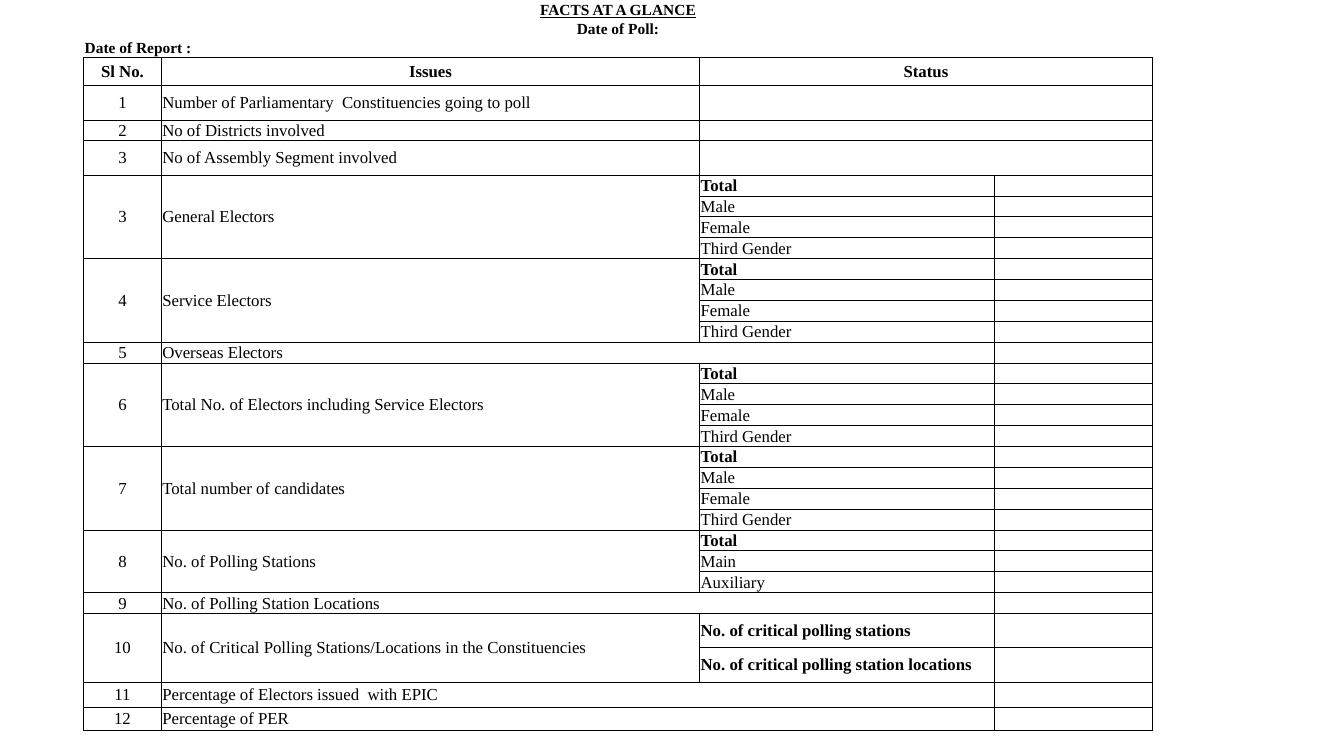
from pptx import Presentation
from pptx.dml.color import RGBColor
from pptx.enum.text import MSO_ANCHOR, PP_ALIGN
from pptx.util import Inches, Pt
from lxml.etree import SubElement
from pptx.oxml.ns import qn

# Content
TITLE, POLL_DATE, REPORT_DATE = "FACTS AT A GLANCE", "Date of Poll:", "Date of Report :"
HEADINGS = ("Sl No.", "Issues", "Status")
GENDERS = ("Total", "Male", "Female", "Third Gender")
STATIONS = ("Total", "Main", "Auxiliary")
CRITICAL = ("No. of critical polling stations", "No. of critical polling station locations")
BOLD_LABELS = ("Total", *CRITICAL)
WIDE_STATUS, WIDE_ISSUE = "wide status", "wide issue"

# Number, issue, status labels or the part that spans two columns, row height (None: regular)
ISSUES = [
    ("1", "Number of Parliamentary  Constituencies going to poll", WIDE_STATUS, 0.34),
    ("2", "No of Districts involved", WIDE_STATUS, None),
    ("3", "No of Assembly Segment involved", WIDE_STATUS, 0.34),
    ("3", "General Electors", GENDERS, None),
    ("4", "Service Electors", GENDERS, None),
    ("5", "Overseas Electors", WIDE_ISSUE, None),
    ("6", "Total No. of Electors including Service Electors", GENDERS, None),
    ("7", "Total number of candidates", GENDERS, None),
    ("8", "No. of Polling Stations", STATIONS, None),
    ("9", "No. of Polling Station Locations", WIDE_ISSUE, None),
    ("10", "No. of Critical Polling Stations/Locations in the Constituencies", CRITICAL, 0.34),
    ("11", "Percentage of Electors issued  with EPIC", WIDE_ISSUE, 0.25),
    ("12", "Percentage of PER", WIDE_ISSUE, 0.23),
]

THEME = {
    "font": "Times New Roman",
    "ink": "000000",
    "caption": Pt(11),
    "body": Pt(12),
    "rule": Pt(0.5),
    "plain_table": "{2D5ABB26-0587-4C30-8999-92F81FD0307C}",
}

# Layout
LEFT, TOP, HEIGHT = 0.83, 0, 7.25
COLUMN_WIDTHS = (0.77, 5.34, 2.92, 1.57)
CAPTION_ROWS, HEADING_ROW = 3, 3
row_heights = [0.19] * CAPTION_ROWS + [0.28]
for _, _, status, height in ISSUES:
    row_heights += [height] * (len(status) if isinstance(status, tuple) else 1)
fixed_height = sum(height for height in row_heights if height)
regular_height = (HEIGHT - fixed_height) / row_heights.count(None)


def draw_borders(cell, sides):
    properties = cell._tc.get_or_add_tcPr()
    for side in sides:
        line = SubElement(properties, qn(f"a:ln{side}"), w=str(THEME["rule"]))
        fill = SubElement(line, qn("a:solidFill"))
        SubElement(fill, qn("a:srgbClr"), val=THEME["ink"])


def write(cell, text, bold=False, centered=False, size=THEME["body"], underline=False):
    paragraph = cell.text_frame.paragraphs[0]
    paragraph.text = text
    paragraph.alignment = PP_ALIGN.CENTER if centered else PP_ALIGN.LEFT
    font = paragraph.font
    font.name, font.size, font.bold, font.underline = THEME["font"], size, bold, underline
    font.color.rgb = RGBColor.from_string(THEME["ink"])


presentation = Presentation()
presentation.slide_width, presentation.slide_height = Inches(13.33), Inches(7.5)
slide = presentation.slides.add_slide(presentation.slide_layouts[6])

# Table grid
facts = slide.shapes.add_table(
    len(row_heights), len(COLUMN_WIDTHS),
    Inches(LEFT), Inches(TOP), Inches(sum(COLUMN_WIDTHS)), Inches(HEIGHT),
).table
facts.first_row = facts.horz_banding = False
facts._tbl.tblPr.find(qn("a:tableStyleId")).text = THEME["plain_table"]
for column, width in zip(facts.columns, COLUMN_WIDTHS):
    column.width = Inches(width)
for row_index, (row, height) in enumerate(zip(facts.rows, row_heights)):
    row.height = Inches(height or regular_height)
    for cell in row.cells:
        if row_index >= CAPTION_ROWS:
            draw_borders(cell, "LRTB")
        elif row_index == CAPTION_ROWS - 1:
            draw_borders(cell, "B")
        cell.fill.background()
        cell.vertical_anchor = MSO_ANCHOR.MIDDLE
        cell.margin_left = cell.margin_right = cell.margin_top = Inches(0.01)
        cell.margin_bottom = 0
        write(cell, "", size=THEME["caption"])
        # An empty cell takes its line height from the paragraph end
        SubElement(cell.text_frame.paragraphs[0]._p, qn("a:endParaRPr"), sz="1100")

# Captions
captions = ((TITLE, 3, True, True), (POLL_DATE, 3, True, False), (REPORT_DATE, 2, False, False))
for row_index, (caption, last_column, centered, underline) in enumerate(captions):
    cell = facts.cell(row_index, 0)
    cell.merge(facts.cell(row_index, last_column))
    write(cell, caption, True, centered, THEME["caption"], underline)

# Headings
for column_index, heading in enumerate(HEADINGS):
    write(facts.cell(HEADING_ROW, column_index), heading, bold=True, centered=True)
facts.cell(HEADING_ROW, 2).merge(facts.cell(HEADING_ROW, 3))

# Issues
first = HEADING_ROW + 1
for number, issue, status, _ in ISSUES:
    write(facts.cell(first, 0), number, centered=True)
    write(facts.cell(first, 1), issue)
    last = first
    if status == WIDE_STATUS:
        facts.cell(first, 2).merge(facts.cell(first, 3))
    elif status == WIDE_ISSUE:
        facts.cell(first, 1).merge(facts.cell(first, 2))
    else:
        last = first + len(status) - 1
        for column_index in (0, 1):
            facts.cell(first, column_index).merge(facts.cell(last, column_index))
        for offset, label in enumerate(status):
            write(facts.cell(first + offset, 2), label, bold=label in BOLD_LABELS)
    first = last + 1

presentation.save("out.pptx")
